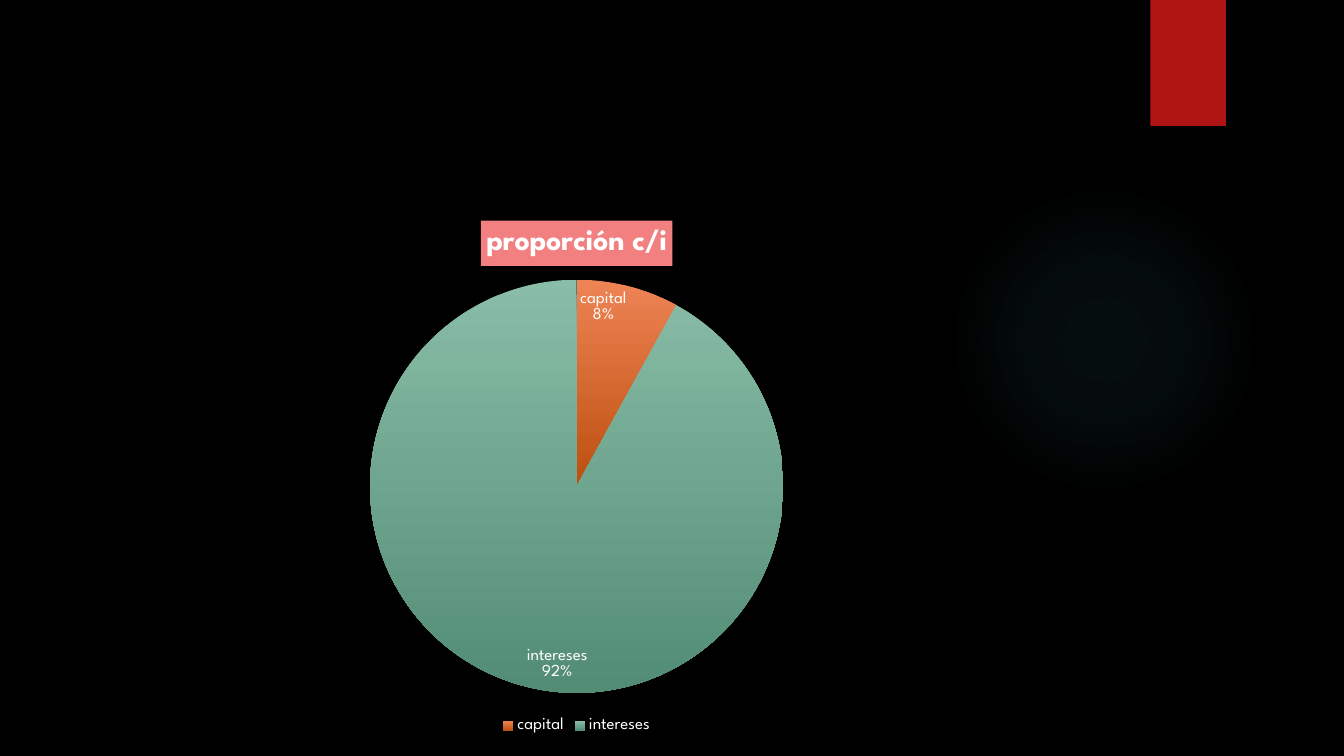
"""Builds a dark slide with a pie chart of capital against interest."""
from dataclasses import dataclass

from lxml import etree
from pptx import Presentation
from pptx.chart.data import CategoryChartData
from pptx.dml.color import RGBColor
from pptx.enum.chart import XL_CHART_TYPE, XL_LABEL_POSITION, XL_LEGEND_POSITION
from pptx.enum.shapes import MSO_SHAPE
from pptx.oxml import parse_xml
from pptx.oxml.ns import nsdecls, qn
from pptx.util import Inches, Pt

PIE = XL_CHART_TYPE.PIE
BOTTOM = XL_LEGEND_POSITION.BOTTOM
INSIDE_END = XL_LABEL_POSITION.INSIDE_END
ELLIPSE = MSO_SHAPE.OVAL
RECTANGLE = MSO_SHAPE.RECTANGLE


@dataclass(frozen=True)
class Theme:
    """Colours, font and type sizes of the slide."""
    font: str = "League Spartan"
    background: str = "000000"
    text: str = "FFFFFF"
    ribbon: str = "B01513"
    glow: str = "50B9C1"
    title_fill: str = "F28080"
    slices: tuple = (("EE8455", "BC4F0E"), ("89BDA7", "538C74"))
    title_size: float = 21.3
    label_size: float = 12
    chart_size: float = 10


class SlideBuilder:
    """Holds the theme and the current slide, and adds elements to it."""

    def __init__(self, page, theme):
        """Keep the page and paint its background."""
        self.page = page
        self.theme = theme
        self.paint(page.background.fill, theme.background)

    def paint(self, fill, color):
        """Fill with one colour."""
        fill.solid()
        fill.fore_color.rgb = RGBColor.from_string(color)

    def style(self, font, size, bold=False):
        """Set the theme font with a size and weight."""
        font.name = self.theme.font
        font.size = Pt(size)
        font.bold = bold
        font.color.rgb = RGBColor.from_string(self.theme.text)

    def shape(self, kind, left, top, width, height):
        """Add a plain shape without line or shadow."""
        shape = self.page.shapes.add_shape(
            kind, Inches(left), Inches(top), Inches(width), Inches(height))
        shape.shadow.inherit = False
        shape.line.fill.background()
        return shape

    def ribbon(self, left, top, width, height):
        """Add a solid rectangle."""
        ribbon = self.shape(RECTANGLE, left, top, width, height)
        self.paint(ribbon.fill, self.theme.ribbon)

    def glow(self, left, top, size, stops):
        """Add a circle that fades outwards through (position, opacity) stops."""
        circle = self.shape(ELLIPSE, left, top, size, size)
        circle.fill.background()
        stop_xml = "".join(
            f'<a:gs pos="{position * 1000}"><a:srgbClr val="{self.theme.glow}">'
            f'<a:alpha val="{opacity * 1000}"/></a:srgbClr></a:gs>'
            for position, opacity in stops)
        gradient = parse_xml(
            f'<a:gradFill {nsdecls("a")}><a:gsLst>{stop_xml}</a:gsLst>'
            '<a:path path="circle"><a:fillToRect l="50000" t="50000" r="50000" b="50000"/>'
            '</a:path></a:gradFill>')
        properties = circle._element.spPr
        properties.replace(properties.find(qn("a:noFill")), gradient)

    def pie(self, left, top, width, height, title, values):
        """Add a titled pie chart with gradient slices."""
        data = CategoryChartData()
        data.categories = list(values)
        data.add_series(title, list(values.values()))
        chart = self.page.shapes.add_chart(
            PIE, Inches(left), Inches(top), Inches(width), Inches(height), data).chart
        self.style(chart.font, self.theme.chart_size)

        chart.has_title = True
        chart.chart_title.include_in_layout = False
        self.paint(chart.chart_title.format.fill, self.theme.title_fill)
        paragraph = chart.chart_title.text_frame.paragraphs[0]
        paragraph.text = title
        self.style(paragraph.font, self.theme.title_size, bold=True)

        chart.has_legend = True
        chart.legend.position = BOTTOM
        chart.legend.include_in_layout = False
        self.style(chart.legend.font, self.theme.label_size)

        plot = chart.plots[0]
        plot.vary_by_categories = True
        for index, colors in enumerate(self.theme.slices):
            slice_format = plot.series[0].points[index].format
            slice_format.line.fill.background()
            slice_format.fill.gradient()
            slice_format.fill.gradient_angle = 270
            for stop, color in zip(slice_format.fill.gradient_stops, colors):
                stop.color.rgb = RGBColor.from_string(color)
        self.pie_labels(plot)

    def pie_labels(self, plot):
        """Show category and percentage on two lines inside each slice."""
        plot.has_data_labels = True
        labels = plot.data_labels
        labels.show_value = False
        labels.show_category_name = True
        labels.show_percentage = True
        labels.number_format = "0%"
        labels.number_format_is_linked = False
        labels.position = INSIDE_END
        self.style(labels.font, self.theme.label_size)
        separator = etree.Element(qn("c:separator"))
        separator.text = "\n"
        labels._element.find(qn("c:showBubbleSize")).addnext(separator)


def main():
    """Build and save the deck."""
    deck = Presentation()
    deck.slide_width = Inches(13.33)
    deck.slide_height = Inches(7.5)
    page = deck.slides.add_slide(deck.slide_layouts[6])
    builder = SlideBuilder(page, Theme())
    builder.glow(9.41, 1.83, 3.08, [(0, 7), (36, 6), (69, 0)])
    builder.ribbon(11.41, 0, 0.75, 1.25)
    builder.pie(0.83, 2.03, 9.78, 5.29, "proporción c/i",
                {"capital": 8, "intereses": 92})
    deck.save("out.pptx")


if __name__ == "__main__":
    main()
